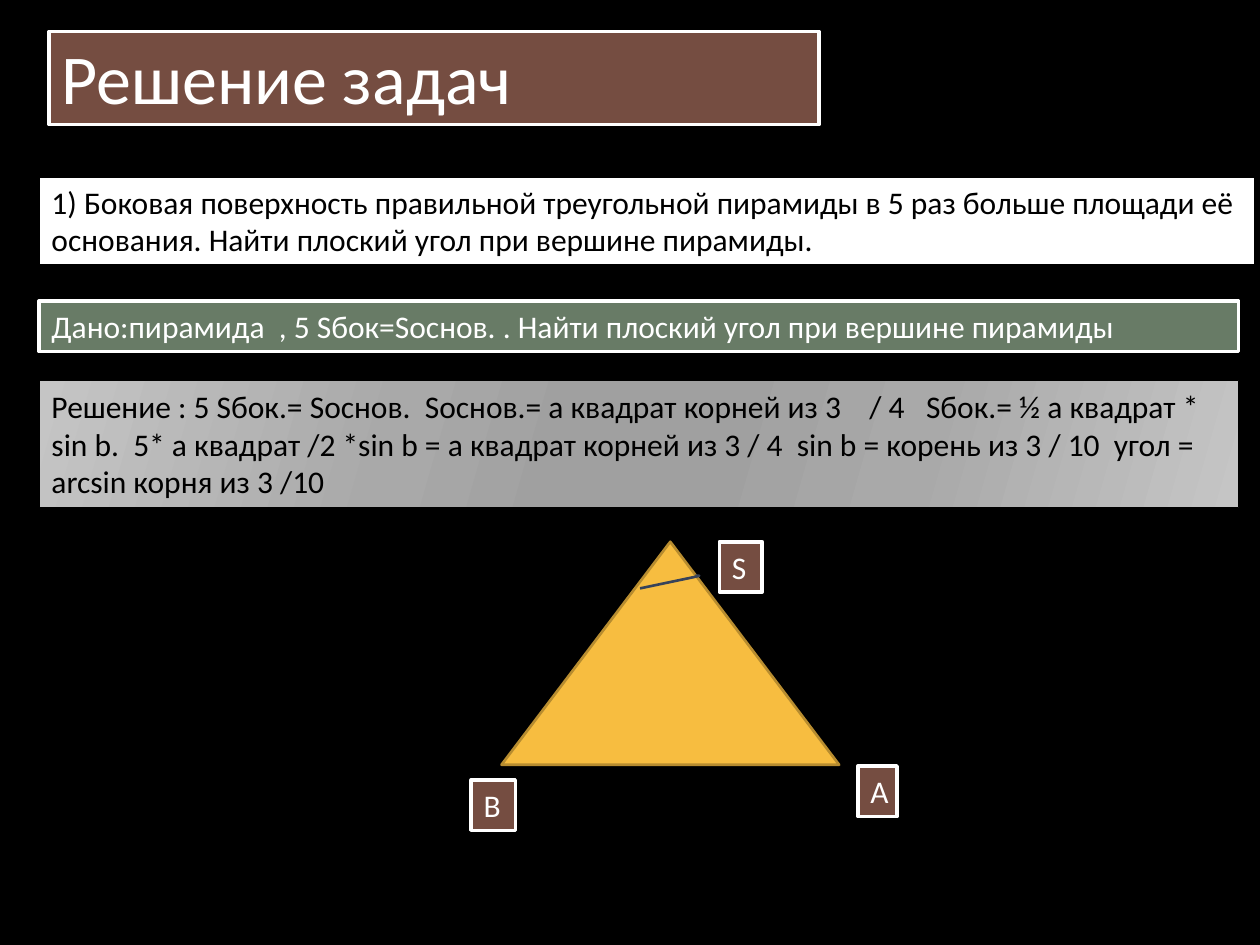
from dataclasses import dataclass

from lxml import etree
from pptx import Presentation
from pptx.dml.color import RGBColor
from pptx.enum.shapes import MSO_SHAPE
from pptx.enum.text import MSO_ANCHOR, MSO_AUTO_SIZE, PP_ALIGN
from pptx.oxml.ns import qn
from pptx.util import Inches, Pt

RECTANGLE = MSO_SHAPE.RECTANGLE
TRIANGLE = MSO_SHAPE.FLOWCHART_EXTRACT
TOP, BOTTOM = MSO_ANCHOR.TOP, MSO_ANCHOR.BOTTOM
GROW, FIXED = MSO_AUTO_SIZE.SHAPE_TO_FIT_TEXT, MSO_AUTO_SIZE.NONE
LEFT = PP_ALIGN.LEFT


@dataclass(frozen=True)
class Theme:
    font: str = "Calibri"
    title_size: int = 40
    body_size: int = 18
    black: str = "000000"
    white: str = "FFFFFF"
    brown: str = "754D41"
    green: str = "687B66"
    gold: str = "F7BD40"
    gold_edge: str = "B78C2F"
    arc: str = "37435A"
    steel: tuple = ((0, "C5C5C5"), (30, "A9A9A9"), (45, "A0A0A0"),
                    (55, "A0A0A0"), (73, "A9A9A9"), (100, "C5C5C5"))
    steel_angle: int = 16


THEME = Theme()

TITLE = "Решение задач"
PROBLEM = ("1) Боковая поверхность правильной треугольной пирамиды в 5 раз больше "
           "площади её основания. Найти плоский угол при вершине пирамиды.")
GIVEN = "Дано:пирамида  , 5 Sбок=Sоснов. . Найти плоский угол при вершине пирамиды"
SOLUTION = ("Решение : 5 Sбок.= Sоснов.  Sоснов.= а квадрат корней из 3    / 4   "
            "Sбок.= ½ a квадрат * sin b.  5* a квадрат /2 *sin b = a квадрат корней "
            "из 3 / 4  sin b = корень из 3 / 10  угол = arcsin корня из 3 /10")
VERTICES = (("B", 3.74, 6.19, 0.35), ("S", 5.71, 4.3, 0.34), ("A", 6.81, 6.08, 0.31))
ANGLE_MARK = ((5.08, 4.67), (5.51, 4.58), (5.55, 4.57), (5.52, 4.57))


def rgb(color):
    return RGBColor.from_string(color)


def set_outline(shape, color, width):
    shape.line.color.rgb = rgb(color)
    shape.line.width = Pt(width)
    shape.shadow.inherit = False


def add_figure(slide, preset, box, fill, edge, edge_width):
    figure = slide.shapes.add_shape(preset, *map(Inches, box))
    figure.fill.solid()
    figure.fill.fore_color.rgb = rgb(fill)
    set_outline(figure, edge, edge_width)
    return figure


def add_panel(slide, text, box, fill, edge, edge_width, ink,
              size=THEME.body_size, anchor=TOP, autosize=GROW):
    panel = add_figure(slide, RECTANGLE, box, fill, edge, edge_width)
    frame = panel.text_frame
    frame.text = text
    frame.word_wrap = True
    frame.auto_size = autosize
    frame.vertical_anchor = anchor
    paragraph = frame.paragraphs[0]
    paragraph.alignment = LEFT
    font = paragraph.runs[0].font
    font.name, font.size, font.color.rgb = THEME.font, Pt(size), rgb(ink)
    return panel


def apply_gradient(shape, stops, angle):
    """Replace the solid fill with a linear gradient of many stops."""
    gradient = etree.Element(qn("a:gradFill"), rotWithShape="1")
    stop_list = etree.SubElement(gradient, qn("a:gsLst"))
    for percent, color in stops:
        stop = etree.SubElement(stop_list, qn("a:gs"), pos=str(percent * 1000))
        etree.SubElement(stop, qn("a:srgbClr"), val=color)
    etree.SubElement(gradient, qn("a:lin"), ang=str(angle * 60000), scaled="0")
    properties = shape.element.spPr
    properties.replace(properties.find(qn("a:solidFill")), gradient)


def add_angle_mark(slide, points):
    start, *rest = [(Inches(x), Inches(y)) for x, y in points]
    builder = slide.shapes.build_freeform(*start)
    builder.add_line_segments(rest, close=False)
    mark = builder.convert_to_shape()
    mark.fill.background()
    set_outline(mark, THEME.arc, 1.5)


def main():
    deck = Presentation()
    deck.slide_width, deck.slide_height = Inches(10), Inches(7.5)
    slide = deck.slides.add_slide(deck.slide_layouts[6])
    slide.background.fill.solid()
    slide.background.fill.fore_color.rgb = rgb(THEME.black)

    # Heading
    heading = add_panel(slide, TITLE, (0.39, 0.25, 6.11, 0.74), THEME.brown,
                        THEME.white, 2, THEME.white, THEME.title_size, BOTTOM, FIXED)
    heading.text_frame.paragraphs[0].space_before = Pt(4)

    # Problem, solution and given data
    add_panel(slide, PROBLEM, (0.31, 1.4, 9.65, 0.71), THEME.white,
              THEME.black, 1.5, THEME.black)
    solution = add_panel(slide, SOLUTION, (0.31, 3.02, 9.52, 1.01), THEME.white,
                         THEME.black, 0.75, THEME.black)
    apply_gradient(solution, THEME.steel, THEME.steel_angle)
    add_panel(slide, GIVEN, (0.31, 2.39, 9.52, 0.4), THEME.green,
              THEME.white, 2, THEME.white)

    # Pyramid face with its apex angle and vertices
    add_figure(slide, TRIANGLE, (3.98, 4.3, 2.68, 1.77), THEME.gold,
               THEME.gold_edge, 1.5)
    add_angle_mark(slide, ANGLE_MARK)
    for vertex, left, top, width in VERTICES:
        add_panel(slide, vertex, (left, top, width, 0.4), THEME.brown,
                  THEME.white, 2, THEME.white)

    deck.save("out.pptx")


if __name__ == "__main__":
    main()
